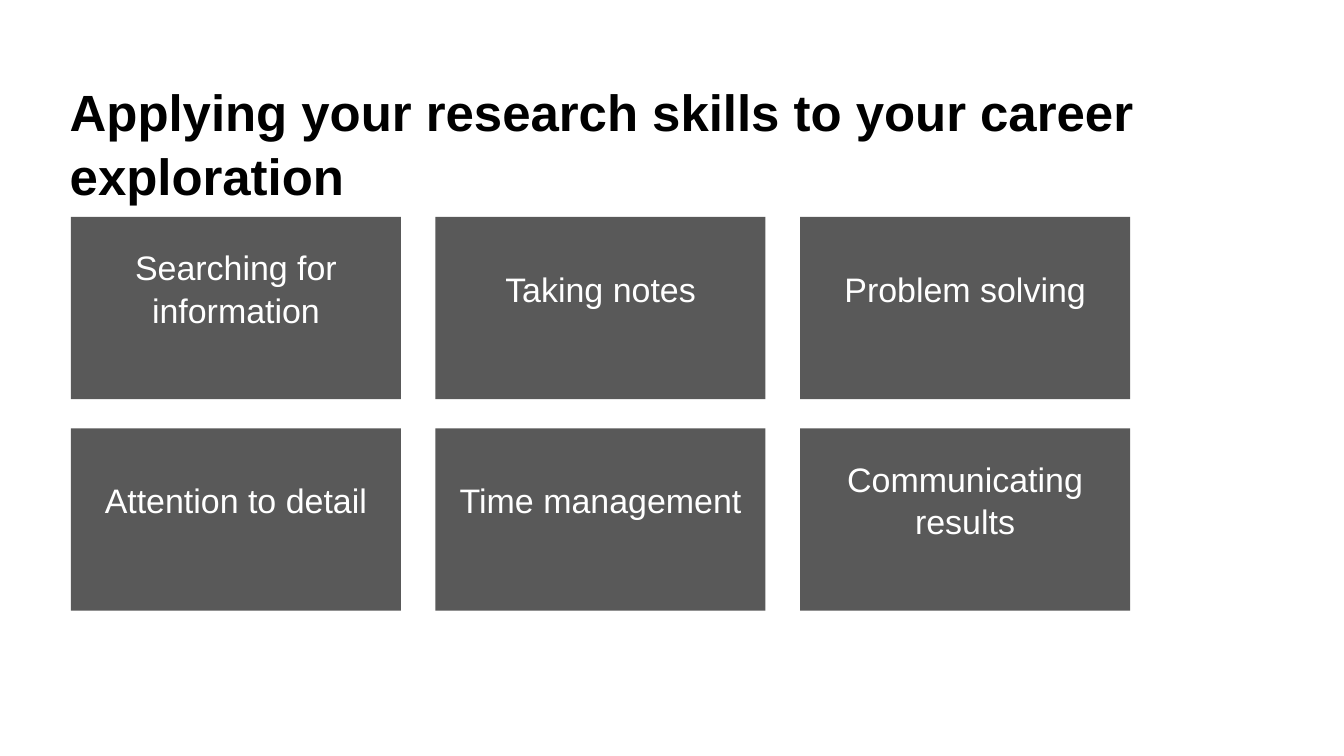
from pptx import Presentation
from pptx.dml.color import RGBColor
from pptx.enum.shapes import MSO_SHAPE
from pptx.enum.text import MSO_ANCHOR, MSO_AUTO_SIZE, PP_ALIGN
from pptx.util import Inches, Pt

RECTANGLE = MSO_SHAPE.RECTANGLE
TOP, MIDDLE = MSO_ANCHOR.TOP, MSO_ANCHOR.MIDDLE
LEFT, CENTER = PP_ALIGN.LEFT, PP_ALIGN.CENTER
NO_AUTOFIT = MSO_AUTO_SIZE.NONE

BLACK = RGBColor(0x00, 0x00, 0x00)
WHITE = RGBColor(0xFF, 0xFF, 0xFF)
GRAY = RGBColor(0x59, 0x59, 0x59)

SKILLS = [
    ["Searching for information", "Taking notes", "Problem solving"],
    ["Attention to detail", "Time management", "Communicating results"],
]
GRID_LEFT, GRID_TOP = 1.16, 3.55
COLUMN_STEP, ROW_STEP = 5.965, 3.46
CARD_WIDTH, CARD_HEIGHT = 5.4, 2.98


def write_text(text_frame, text, size, color, alignment, bold=False):
    text_frame.word_wrap = True
    paragraph = text_frame.paragraphs[0]
    paragraph.alignment = alignment
    paragraph.line_spacing = 1.05
    paragraph.space_before = Pt(0)
    run = paragraph.add_run()
    run.text = text
    run.font.name = "Arial"
    run.font.size = Pt(size)
    run.font.bold = bold
    run.font.color.rgb = color


presentation = Presentation()
presentation.slide_width = Inches(21.99)
presentation.slide_height = Inches(12.37)
slide = presentation.slides.add_slide(presentation.slide_layouts[5])
slide.background.fill.solid()
slide.background.fill.fore_color.rgb = WHITE

title = slide.shapes.title
title.left, title.top = Inches(1.14), Inches(1.27)
title.width, title.height = Inches(17.94), Inches(1.42)
title_frame = title.text_frame
title_frame.auto_size = NO_AUTOFIT
title_frame.vertical_anchor = TOP
title_frame.margin_left = title_frame.margin_right = 0
title_frame.margin_top = title_frame.margin_bottom = 0
write_text(title_frame, "Applying your research skills to your career exploration",
           60, BLACK, LEFT, bold=True)

for row, skills in enumerate(SKILLS):
    for column, skill in enumerate(skills):
        card = slide.shapes.add_shape(
            RECTANGLE,
            Inches(GRID_LEFT + column * COLUMN_STEP),
            Inches(GRID_TOP + row * ROW_STEP),
            Inches(CARD_WIDTH), Inches(CARD_HEIGHT))
        card.shadow.inherit = False
        card.fill.solid()
        card.fill.fore_color.rgb = GRAY
        card.line.fill.background()
        card.text_frame.vertical_anchor = MIDDLE
        card.text_frame.margin_bottom = Inches(0.72)
        write_text(card.text_frame, skill, 40, WHITE, CENTER)

presentation.save("out.pptx")
